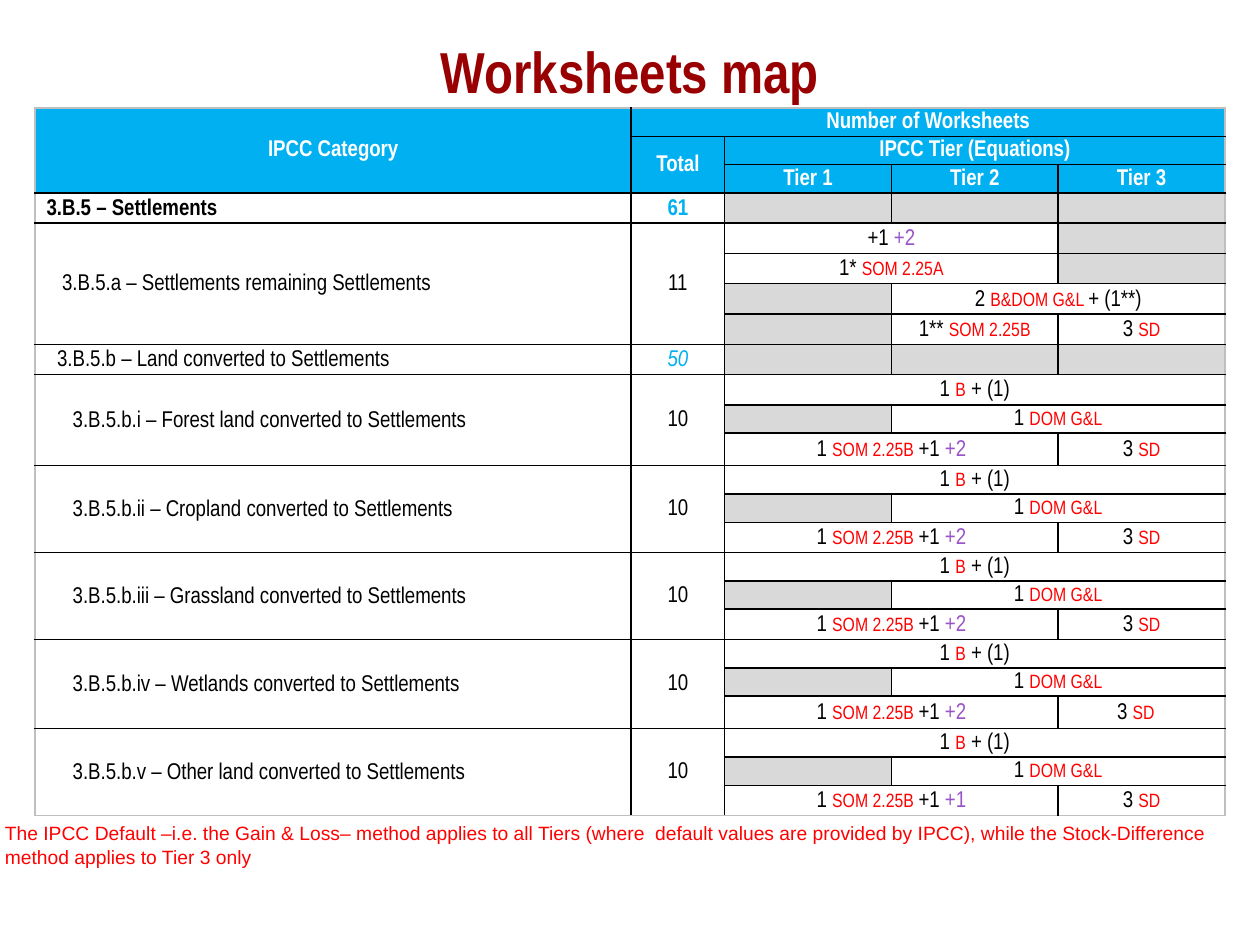
import lxml.etree
import pptx
import pptx.dml.color
import pptx.enum.text
import pptx.oxml.ns
import pptx.util

Pt = pptx.util.Pt
RGBColor = pptx.dml.color.RGBColor
PP_ALIGN = pptx.enum.text.PP_ALIGN
MSO_ANCHOR = pptx.enum.text.MSO_ANCHOR
MSO_AUTO_SIZE = pptx.enum.text.MSO_AUTO_SIZE
qn = pptx.oxml.ns.qn

DARK_RED = RGBColor(0x99, 0x00, 0x02)
BLUE = RGBColor(0x00, 0xB0, 0xF0)
GREY = RGBColor(0xD9, 0xD9, 0xD9)
EDGE_GREY = RGBColor(0xBF, 0xBF, 0xBF)
PURPLE = RGBColor(0x99, 0x54, 0xC8)
RED = RGBColor(0xFF, 0x00, 0x00)
BLACK = RGBColor(0x00, 0x00, 0x00)
WHITE = RGBColor(0xFF, 0xFF, 0xFF)

NARROW = "Arial Narrow"
BODY_SIZE, METHOD_SIZE = 13, 11
CELL_INSET = 0.72
LOOSE = 1.07  # line spacing of most body cells

# Row heights: header, then Settlements, then one block per land category
LOW, MID, TALL = 16.2, 17.3, 18.6
ROW_HEIGHTS = (
    [LOW] * 3 + [MID] * 6 + [MID, LOW, TALL]
    + [LOW, LOW, MID] * 2 + [LOW, LOW, TALL] + [LOW, LOW, MID]
)

# Land category, added worksheets, extra right inset of its Tier 3 cell
CONVERSIONS = [
    ("3.B.5.b.i – Forest land converted to Settlements", "+2", 0),
    ("3.B.5.b.ii – Cropland converted to Settlements", "+2", 0),
    ("3.B.5.b.iii – Grassland converted to Settlements", "+2", 0),
    ("3.B.5.b.iv – Wetlands converted to Settlements", "+2", 6.4),
    ("3.B.5.b.v – Other land converted to Settlements", "+1", 0),
]


def count(text, color=BLACK):
    return text, BODY_SIZE, color


def method(text):
    return text, METHOD_SIZE, RED


STOCK_DIFFERENCE = [count("3 "), method("SD")]


def style_font(font, size, color, name=NARROW, bold=False, italic=False):
    font.name, font.size, font.color.rgb = name, Pt(size), color
    font.bold, font.italic = bold, italic


def set_fill(cell, color):
    cell.fill.solid()
    cell.fill.fore_color.rgb = color


def put(table, row, col, runs, rows=1, cols=1, fill=WHITE, spacing=LOOSE,
        indent=None, shift=0, bold=False, italic=False):
    """Fill one cell, merged over rows and cols; an indent means left-aligned."""
    cell = table.cell(row, col)
    if rows * cols > 1:
        cell.merge(table.cell(row + rows - 1, col + cols - 1))
    set_fill(cell, fill)
    cell.margin_left = Pt(CELL_INSET + (indent or 0))
    cell.margin_right = Pt(CELL_INSET + shift)
    paragraph = cell.text_frame.paragraphs[0]
    paragraph.alignment = PP_ALIGN.CENTER if indent is None else PP_ALIGN.LEFT
    paragraph.line_spacing = spacing
    for text, size, color in runs:
        run = paragraph.add_run()
        run.text = text
        style_font(run.font, size, color, bold=bold, italic=italic)


def add_borders(table):
    last_row, last_col = len(table.rows) - 1, len(table.columns) - 1
    for row in range(last_row + 1):
        for col in range(last_col + 1):
            cell = table.cell(row, col)
            wide = cell.span_width if cell.is_merge_origin else 1
            high = cell.span_height if cell.is_merge_origin else 1
            outer = {
                "lnL": col == 0,
                "lnR": col + wide > last_col,
                "lnT": row == 0,
                "lnB": row + high > last_row,
            }
            properties = cell._tc.get_or_add_tcPr()
            for place, (side, is_outer) in enumerate(outer.items()):
                line = lxml.etree.Element(qn("a:" + side), w=str(Pt(1)))
                fill = lxml.etree.SubElement(line, qn("a:solidFill"))
                color = EDGE_GREY if is_outer else BLACK
                lxml.etree.SubElement(fill, qn("a:srgbClr"), val=str(color))
                properties.insert(place, line)


def fill_header(table):
    for row, col, rows, cols, text in [
        (0, 0, 3, 1, "IPCC Category"),
        (0, 1, 1, 4, "Number of Worksheets"),
        (1, 1, 2, 1, "Total"),
        (1, 2, 1, 3, "IPCC Tier (Equations)"),
        (2, 2, 1, 1, "Tier 1"),
        (2, 3, 1, 1, "Tier 2"),
        (2, 4, 1, 1, "Tier 3"),
    ]:
        put(table, row, col, [count(text, WHITE)], rows, cols, BLUE, 1.0, bold=True)


def fill_settlements(table, top):
    put(table, top, 0, [count("3.B.5 – Settlements")], indent=5.9, bold=True)
    put(table, top, 1, [count("61", BLUE)], bold=True)

    # Settlements remaining Settlements
    first = top + 1
    put(table, first, 0, [count("3.B.5.a – Settlements remaining Settlements")],
        rows=4, indent=14.8)
    put(table, first, 1, [count("11")], rows=4)
    put(table, first, 2, [count("+1 "), count("+2", PURPLE)], cols=2)
    put(table, first + 1, 2, [count("1* "), method("SOM 2.25A")], cols=2)
    put(table, first + 2, 3,
        [count("2 "), method("B&DOM G&L "), count("+ (1**)")], cols=2)
    put(table, first + 3, 3, [count("1** "), method("SOM 2.25B")])
    put(table, first + 3, 4, STOCK_DIFFERENCE)

    # Land converted to Settlements
    put(table, top + 5, 0, [count("3.B.5.b – Land converted to Settlements")],
        indent=11.9)
    put(table, top + 5, 1, [count("50", BLUE)], italic=True)


def fill_conversion(table, top, name, added, shift):
    put(table, top, 0, [count(name)], rows=3, indent=20.8)
    put(table, top, 1, [count("10")], rows=3, spacing=1.0)
    put(table, top, 2, [count("1 "), method("B"), count(" + (1)")],
        cols=3, spacing=1.0)
    put(table, top + 1, 3, [count("1 "), method("DOM G&L")], cols=2, spacing=1.0)
    put(table, top + 2, 2,
        [count("1 "), method("SOM 2.25B "), count("+1 "), count(added, PURPLE)],
        cols=2)
    put(table, top + 2, 4, STOCK_DIFFERENCE, shift=shift)


def add_worksheet_table(slide, left, top, width, height):
    table = slide.shapes.add_table(
        len(ROW_HEIGHTS), 5, Pt(left), Pt(top), Pt(width), Pt(height)).table
    table.first_row = table.horz_banding = False

    # Grid: wide category, narrow total, three equal tiers
    category, total = width * 0.501, width * 0.0785
    tier = (width - category - total) / 3
    for column, size in zip(table.columns, [category, total, tier, tier, tier]):
        column.width = Pt(size)
    for row, size in zip(table.rows, ROW_HEIGHTS):
        row.height = Pt(height * size / sum(ROW_HEIGHTS))

    # Cells without worksheets stay grey; small type keeps their rows low
    for cell in table.iter_cells():
        set_fill(cell, GREY)
        cell.vertical_anchor = MSO_ANCHOR.MIDDLE
        cell.margin_left = cell.margin_right = cell.margin_top = Pt(CELL_INSET)
        cell.margin_bottom = 0
        lxml.etree.SubElement(cell.text_frame.paragraphs[0]._p,
                              qn("a:endParaRPr"), sz=str(METHOD_SIZE * 100))

    fill_header(table)
    fill_settlements(table, 3)
    for index, conversion in enumerate(CONVERSIONS):
        fill_conversion(table, 9 + 3 * index, *conversion)
    add_borders(table)


def place_title(slide, left, top, width, height):
    title = slide.shapes.title
    title.left, title.top = Pt(left), Pt(top)
    title.width, title.height = Pt(width), Pt(height)
    frame = title.text_frame
    frame.text = "Worksheets map"
    frame.auto_size = MSO_AUTO_SIZE.NONE
    frame.vertical_anchor = MSO_ANCHOR.MIDDLE
    frame.paragraphs[0].alignment = PP_ALIGN.CENTER
    style_font(frame.paragraphs[0].font, 33, DARK_RED, bold=True)


def add_footnote(slide, left, top, width, height):
    frame = slide.shapes.add_textbox(
        Pt(left), Pt(top), Pt(width), Pt(height)).text_frame
    frame.word_wrap = True
    frame.text = (
        "The IPCC Default –i.e. the Gain & Loss– method applies to all Tiers "
        "(where  default values are provided by IPCC), while the "
        "Stock-Difference method applies to Tier 3 only")
    style_font(frame.paragraphs[0].font, 11, RED, name="Arial")


def main():
    presentation = pptx.Presentation()
    presentation.slide_width, presentation.slide_height = Pt(720), Pt(540)
    slide = presentation.slides.add_slide(presentation.slide_layouts[5])
    place_title(slide, 0, 18, 720, 44)
    add_worksheet_table(slide, 20, 61.7, 680, 404.6)
    add_footnote(slide, -4.3, 466, 720, 34)
    presentation.save("out.pptx")


if __name__ == "__main__":
    main()
